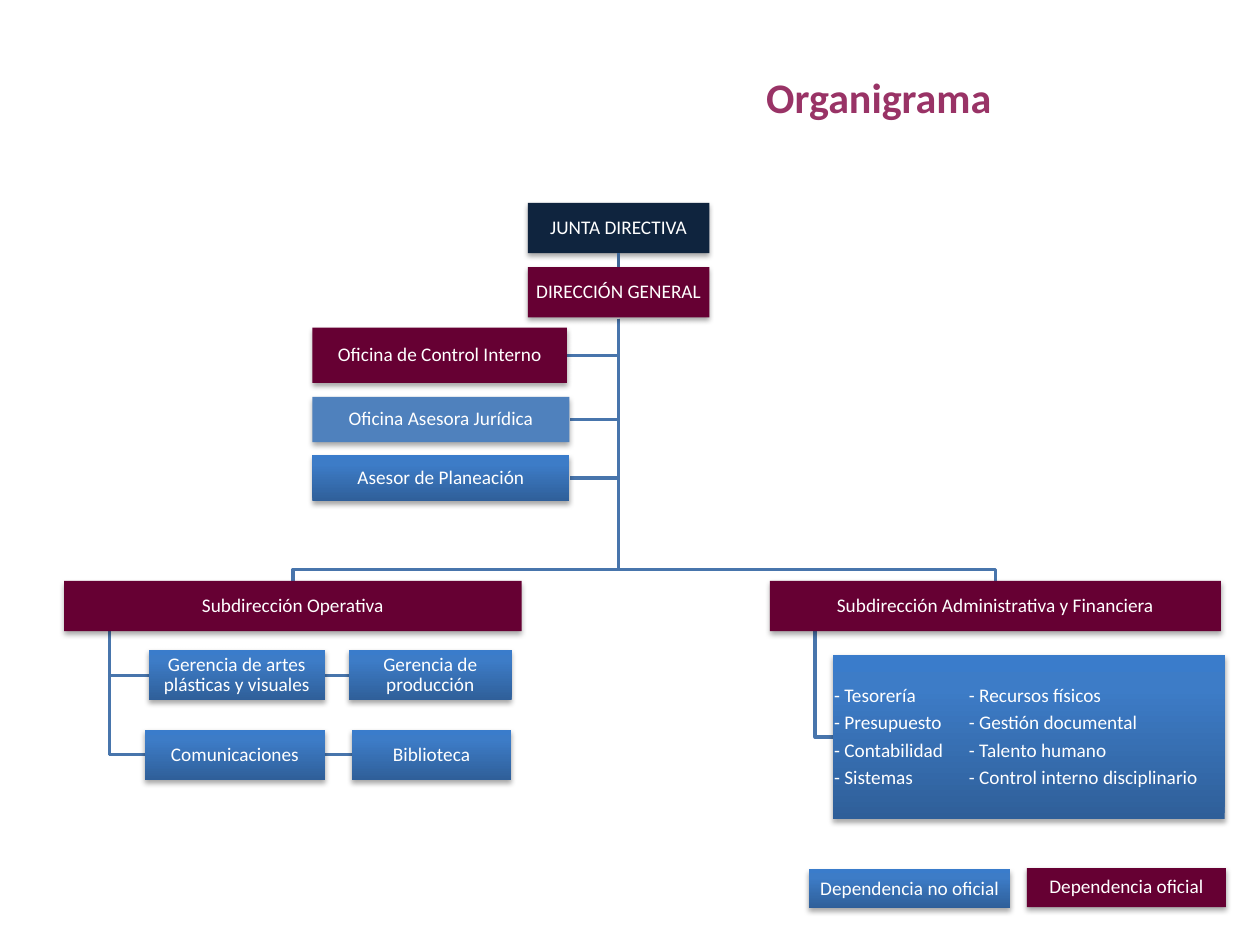
from copy import deepcopy

from lxml.etree import SubElement
from pptx import Presentation
from pptx.dml.color import RGBColor
from pptx.enum.shapes import MSO_CONNECTOR, MSO_SHAPE
from pptx.enum.text import MSO_ANCHOR, PP_ALIGN
from pptx.oxml.ns import qn
from pptx.util import Inches, Pt

FONT = "Calibri"
NAVY, OFFICIAL, ADVISORY = "0F243E", "660033", "4F81BD"
UNOFFICIAL = [(0, "2F5F99"), (0.8, "3D7CC7"), (1, "3A7CCB")]
LINK, TOP_LINK = "4875AC", "3F6797"

TRUNK_X, TRUNK_Y, BRANCH_Y, DIVISION_Y = 4.91, 2.53, 4.52, 4.61
DIVISION_BOTTOM = DIVISION_Y + 0.4

BOARD = ("JUNTA DIRECTIVA", 4.19, 1.61, 1.44, 0.4, NAVY)
DIRECTION = ("DIRECCIÓN GENERAL", 4.19, 2.12, 1.44, 0.4, OFFICIAL)
OFFICES = [
    ("Oficina de Control Interno", 2.48, 2.6, 2.02, 0.44, OFFICIAL),
    ("Oficina Asesora Jurídica", 2.48, 3.15, 2.04, 0.36, ADVISORY),
    ("Asesor de Planeación", 2.48, 3.61, 2.04, 0.37, UNOFFICIAL),
]
DIVISIONS = [
    ("Subdirección Operativa", 0.51, DIVISION_Y, 3.63, 0.4, OFFICIAL),
    ("Subdirección Administrativa y Financiera", 6.11, DIVISION_Y, 3.58, 0.4, OFFICIAL),
]
OPERATIONS = [
    ("Gerencia de artes plásticas y visuales", 1.18, 5.16, 1.4, 0.4, UNOFFICIAL),
    ("Gerencia de producción", 2.77, 5.16, 1.29, 0.4, UNOFFICIAL),
    ("Comunicaciones", 1.15, 5.79, 1.43, 0.4, UNOFFICIAL),
    ("Biblioteca", 2.79, 5.79, 1.27, 0.4, UNOFFICIAL),
]
ADMIN_AREAS = [
    "- Tesorería\t- Recursos físicos",
    "- Presupuesto\t- Gestión documental",
    "- Contabilidad\t- Talento humano",
    "- Sistemas\t- Control interno disciplinario",
]
ADMIN = ("\n".join(ADMIN_AREAS), 6.61, 5.2, 3.11, 1.3, UNOFFICIAL)
LEGEND = [
    ("Dependencia oficial", 8.15, 6.89, 1.58, 0.31, OFFICIAL),
    ("Dependencia no oficial", 6.42, 6.9, 1.6, 0.31, UNOFFICIAL),
]


def rgb(value):
    """Turn a hex string into a colour."""
    return RGBColor.from_string(value)


def style_text(paragraph, size, color, bold=False):
    """Set the font of a whole paragraph."""
    font = paragraph.font
    font.name, font.size, font.bold = FONT, Pt(size), bold
    font.color.rgb = rgb(color)


def add_title(slide, text):
    """Fill and place the title placeholder."""
    title = slide.shapes.title
    title.left, title.top = Inches(4.06), Inches(0.52)
    title.width, title.height = Inches(5.83), Inches(0.5)
    title.text_frame.text = text
    title.text_frame.vertical_anchor = MSO_ANCHOR.MIDDLE
    heading = title.text_frame.paragraphs[0]
    heading.alignment = PP_ALIGN.CENTER
    style_text(heading, 24, "993366", bold=True)


def fill_box(box, fill):
    """Give a box a solid colour or a vertical gradient of stops."""
    if isinstance(fill, str):
        box.fill.solid()
        box.fill.fore_color.rgb = rgb(fill)
        return
    box.fill.gradient()
    box.fill.gradient_angle = 90
    stop_list = box.element.spPr.find(".//" + qn("a:gsLst"))
    stop_list.append(deepcopy(stop_list[-1]))
    for stop, (position, color) in zip(box.fill.gradient_stops, fill):
        stop.position = position
        stop.color.rgb = rgb(color)


def add_shadow(box):
    """Cast a soft shadow straight down."""
    box.shadow.inherit = False
    effects = box.element.spPr.find(qn("a:effectLst"))
    shadow = SubElement(effects, qn("a:outerShdw"), blurRad=str(Pt(3.1)),
                        dist=str(Pt(1.8)), dir="5400000", rotWithShape="0")
    color = SubElement(shadow, qn("a:srgbClr"), val="000000")
    SubElement(color, qn("a:alpha"), val="35000")


def add_tab(paragraph, position):
    """Set one left tab stop on a paragraph."""
    tabs = SubElement(paragraph._p.get_or_add_pPr(), qn("a:tabLst"))
    SubElement(tabs, qn("a:tab"), pos=str(position), algn="l")


def add_box(slide, text, left, top, width, height, fill):
    """Add a unit of the chart, with tabbed columns where its text has tabs."""
    box = slide.shapes.add_shape(MSO_SHAPE.RECTANGLE, Inches(left), Inches(top),
                                 Inches(width), Inches(height))
    fill_box(box, fill)
    box.line.fill.background()
    add_shadow(box)
    frame = box.text_frame
    frame.word_wrap = True
    frame.vertical_anchor = MSO_ANCHOR.MIDDLE
    frame.margin_left = frame.margin_right = Inches(0.01)
    frame.margin_top = frame.margin_bottom = Inches(0.01)
    frame.text = text
    for paragraph in frame.paragraphs:
        paragraph.line_spacing = 0.9
        paragraph.space_after = Pt(3.85)
        paragraph.alignment = PP_ALIGN.LEFT if "\t" in text else PP_ALIGN.CENTER
        if "\t" in text:
            add_tab(paragraph, Inches(1.07))
        style_text(paragraph, 11, "FFFFFF")
    return box


def add_elbow(slide, *points):
    """Draw an open line through the points."""
    start, *rest = [(Inches(x), Inches(y)) for x, y in points]
    builder = slide.shapes.build_freeform(*start)
    builder.add_line_segments(rest, close=False)
    elbow = builder.convert_to_shape()
    elbow.fill.background()
    elbow.line.color.rgb = rgb(LINK)
    elbow.line.width = Pt(2)
    elbow.shadow.inherit = False


def add_side_link(slide, x, y, unit, right_side=False):
    """Drop from a point and turn to the side of a unit."""
    _, left, top, width, height, _ = unit
    middle = top + height / 2
    side = left + width if right_side else left
    add_elbow(slide, (x, y), (x, middle), (side, middle))


def add_division_link(slide, division):
    """Branch from the trunk to the top of a division."""
    _, left, top, width, _, _ = division
    center = left + width / 2
    add_elbow(slide, (TRUNK_X, TRUNK_Y), (TRUNK_X, BRANCH_Y),
              (center, BRANCH_Y), (center, top))


def add_top_link(slide, board, direction):
    """Join the board to the general direction."""
    link = slide.shapes.add_connector(MSO_CONNECTOR.STRAIGHT, 0, 0, 0, 0)
    link.begin_connect(board, 2)
    link.end_connect(direction, 0)
    link.line.color.rgb = rgb(TOP_LINK)
    link.line.width = Pt(2)
    SubElement(link._element.spPr, qn("a:effectLst"))


def main():
    """Build the organisation chart."""
    presentation = Presentation()
    presentation.slide_width, presentation.slide_height = Inches(10), Inches(7.5)
    slide = presentation.slides.add_slide(presentation.slide_layouts[5])
    add_title(slide, "Organigrama")

    for office in OFFICES:
        add_side_link(slide, TRUNK_X, TRUNK_Y, office, right_side=True)
    for division in DIVISIONS:
        add_division_link(slide, division)
    for unit in OPERATIONS:
        add_side_link(slide, 0.87, DIVISION_BOTTOM, unit)
    add_side_link(slide, 6.47, DIVISION_BOTTOM, ADMIN)

    board, direction = add_box(slide, *BOARD), add_box(slide, *DIRECTION)
    add_top_link(slide, board, direction)
    for unit in [*OFFICES, *DIVISIONS, *OPERATIONS, ADMIN, *LEGEND]:
        add_box(slide, *unit)
    presentation.save("out.pptx")


if __name__ == "__main__":
    main()
